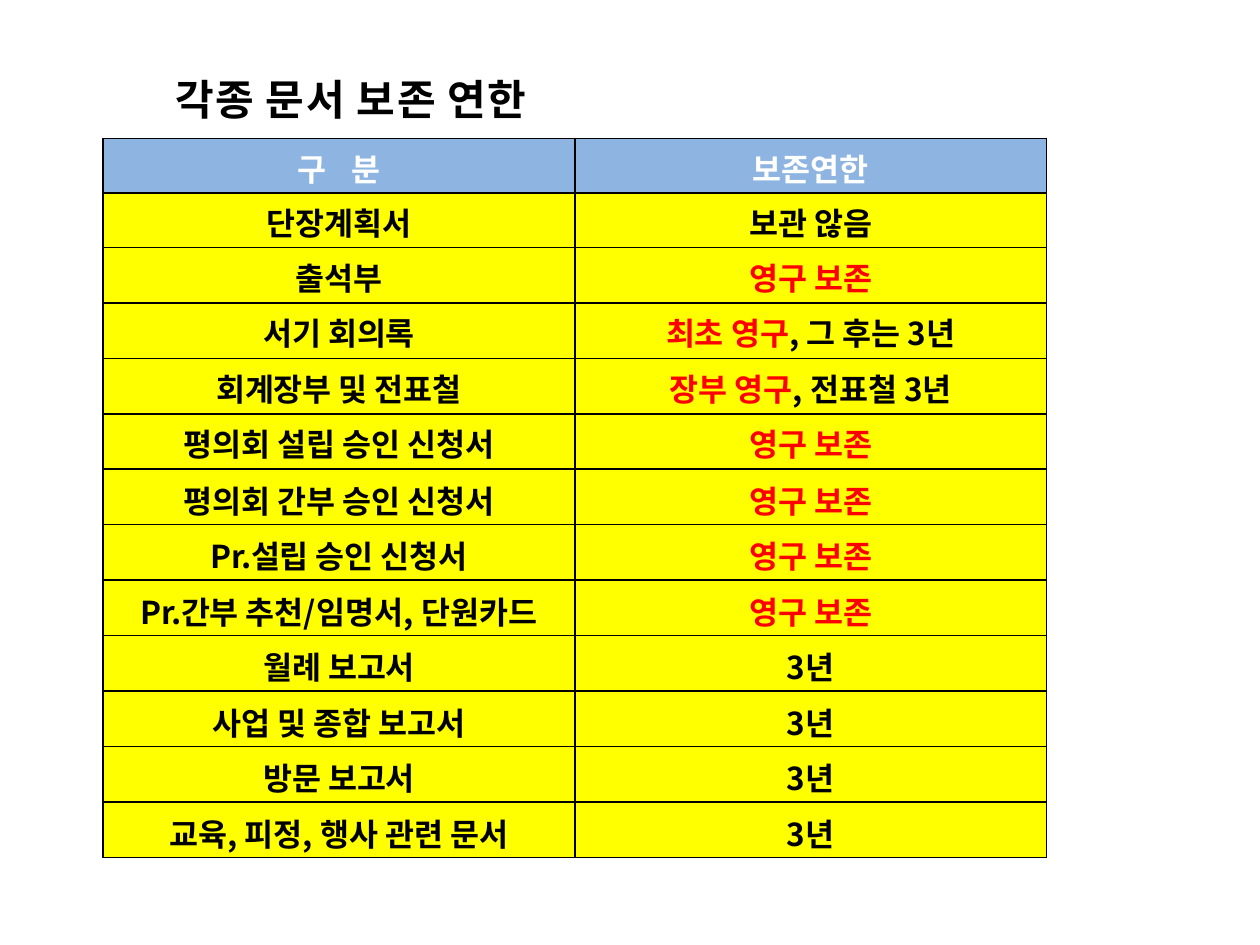
from lxml import etree
from pptx import Presentation
from pptx.dml.color import RGBColor
from pptx.enum import text as t
from pptx.oxml import ns
from pptx.util import Pt

THEME = {
    "font": "Noto Sans CJK KR", "head": 24, "body": 18,
    "ink": "000000", "red": "FF0000", "white": "FFFFFF",
    "blue": "8EB4E2", "yellow": "FFFF00",
}
WIDE, TIGHT = 1.2, 0.5
TITLE = [("각", WIDE), ("종 ", TIGHT), ("문", WIDE), ("서 ", TIGHT),
         ("보", WIDE), ("존 ", TIGHT), ("연한", WIDE)]
HEAD = ("구\t분", "보존연한")
KEEP = [("영구 보존", "red")]
THREE = [("3년", "ink")]
ROWS = [
    ([("단장계획서", 0)], [("보관 않음", "ink")]),
    ([("출석부", -0.1)], KEEP),
    ([("서기 ", 0), ("회의록", -0.1)], [("최초 영구", "red"), (", 그 후는 3년", "ink")]),
    ([("회계장부 ", -0.1), ("및 전표철", 0)], [("장부 영구", "red"), (", 전표철 3년", "ink")]),
    ([("평의회 ", -0.1), ("설립 승인 ", 0), ("신청서", -0.1)], KEEP),
    ([("평의회 ", -0.1), ("간부 승인 ", 0), ("신청서", -0.1)], KEEP),
    ([("Pr.설립 ", -0.4), ("승인 신청서", 0)], KEEP),
    ([("Pr.간부 ", -0.4), ("추천/임명서, ", 0.1), ("단원카드", 0)], KEEP),
    ([("월례 ", 0), ("보고서", -0.1)], THREE),
    ([("사업 및 종합 보고서", 0)], THREE),
    ([("방문 ", 0), ("보고서", -0.1)], THREE),
    ([("교육, 피정, 행사 관련 문서", 0)], THREE),
]


def sub(node, tag, **attrs):
    return etree.SubElement(node, ns.qn(tag), attrs)


def write(frame, runs, size="body", align=t.PP_ALIGN.CENTER, before=0, tab=None):
    para = frame.paragraphs[0]
    if tab:
        stops = sub(para._p.get_or_add_pPr(), "a:tabLst")
        sub(stops, "a:tab", pos=str(Pt(tab)), algn="l")
    para.alignment = align
    para.space_before = Pt(before)
    for words, color, gap in runs:
        run = para.add_run()
        run.text = words
        font = run.font
        font.name, font.size, font.bold = THEME["font"], Pt(THEME[size]), True
        font.color.rgb = RGBColor.from_string(THEME[color])
        props = run._r.get_or_add_rPr()
        props.set("spc", str(round(gap * 100)))
        sub(props, "a:ea", typeface=THEME["font"])


def border(cell):
    props = cell._tc.get_or_add_tcPr()
    for side in "LRTB":
        line = sub(props, "a:ln" + side, w=str(Pt(1)))
        sub(sub(line, "a:solidFill"), "a:srgbClr", val=THEME["ink"])


def pad(box, top):
    box.margin_left = box.margin_right = box.margin_bottom = 0
    box.margin_top = Pt(top)
    box.vertical_anchor = t.MSO_ANCHOR.TOP


def style(cell, row, fill):
    pad(cell, 3.6 if row < 6 else 4.3)
    border(cell)
    cell.fill.solid()
    cell.fill.fore_color.rgb = RGBColor.from_string(THEME[fill])


def add_title(slide):
    title = slide.shapes.title
    title.left, title.top, title.width, title.height = Pt(100), Pt(41), Pt(216), Pt(31)
    frame = title.text_frame
    frame.word_wrap = True
    frame.auto_size = t.MSO_AUTO_SIZE.SHAPE_TO_FIT_TEXT
    pad(frame, 1)
    write(frame, [(words, "ink", gap) for words, gap in TITLE],
          size="head", align=t.PP_ALIGN.LEFT)


def add_grid(slide):
    high = [31.2] * 2 + [31.7] * (len(ROWS) - 1)
    grid = slide.shapes.add_table(len(high), 2, Pt(59), Pt(79),
                                  Pt(539), Pt(sum(high))).table
    grid.first_row = grid.horz_banding = False
    for col in grid.columns:
        col.width = Pt(269.5)
    lines = [[[(words, "white", 0)] for words in HEAD]]
    for name, term in ROWS:
        lines.append([[(words, "ink", gap) for words, gap in name],
                      [(words, color, 0) for words, color in term]])
    for row, line in enumerate(lines):
        grid.rows[row].height = Pt(high[row])
        for col, runs in enumerate(line):
            cell = grid.cell(row, col)
            style(cell, row, "yellow" if row else "blue")
            write(cell.text_frame, runs, before=3.7 + 0.04 * row,
                  tab=31 if "\t" in runs[0][0] else None)


def main():
    deck = Presentation()
    deck.slide_width, deck.slide_height = Pt(720), Pt(540)
    slide = deck.slides.add_slide(deck.slide_layouts[5])
    add_grid(slide)
    add_title(slide)
    deck.save("out.pptx")


if __name__ == "__main__":
    main()
